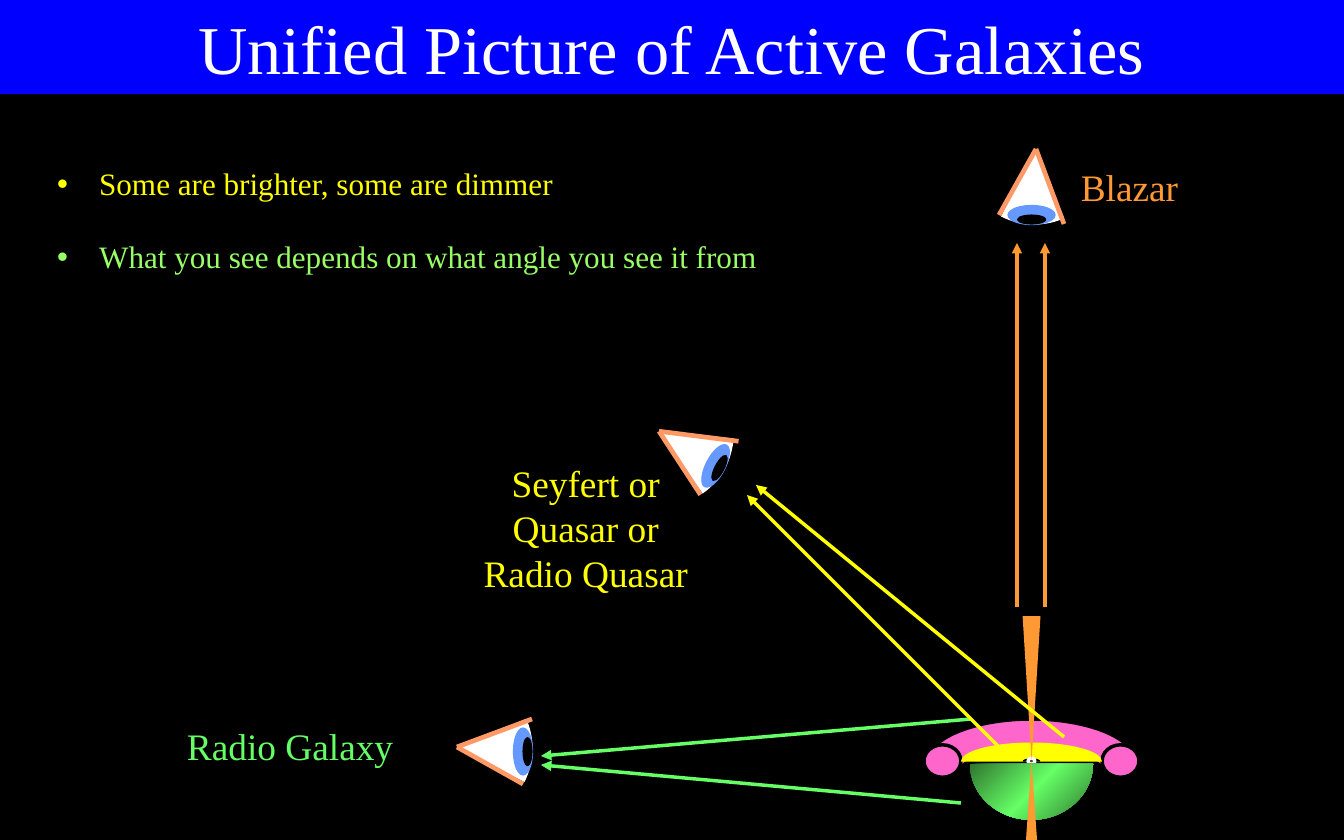
from copy import deepcopy
from itertools import pairwise
from math import cos, radians, sin, tan

from lxml.etree import SubElement
from pptx import Presentation
from pptx.dml.color import RGBColor
from pptx.enum.shapes import MSO_CONNECTOR as Link, MSO_SHAPE as Kind
from pptx.enum.text import MSO_ANCHOR as Anchor, MSO_AUTO_SIZE as Fit, PP_ALIGN as Align
from pptx.oxml.ns import qn
from pptx.util import Inches, Pt

FONT = "Times New Roman"
BLACK, WHITE = "000000", "FFFFFF"
PINK, YELLOW, ORANGE, GREEN = "FF66CC", "FFFF00", "FF9933", "66FF66"
AXIS = 9.21


def paint(target, color):
    """Give a fill one solid colour."""
    target.solid()
    target.fore_color.rgb = RGBColor.from_string(color)


def place(shape, left, top, width, height):
    """Move and size a shape in inches."""
    shape.left, shape.top = Inches(left), Inches(top)
    shape.width, shape.height = Inches(width), Inches(height)


def style(shape, fill, edge=None, weight=0.75):
    """Set the fill and outline of a shape."""
    shape.shadow.inherit = False
    paint(shape.fill, fill)
    if edge:
        paint(shape.line.fill, edge)
        shape.line.width = Pt(weight)
    else:
        shape.line.fill.background()


def preset(shapes, kind, mid, size, fill, edge=None, weight=0.75, turn=0):
    """Draw a preset shape around its middle point."""
    left, top = (m - s / 2 for m, s in zip(mid, size))
    shape = shapes.add_shape(kind, *map(Inches, (left, top, *size)))
    shape.rotation = turn
    style(shape, fill, edge, weight)


def arc(hub, radii, start, end):
    """List the Bezier points of an arc, cut at each quarter turn."""
    cuts = [start, *(q for q in range(-90, 541, 90) if start < q < end), end]
    spots = []
    for a, b in pairwise(map(radians, cuts)):
        k = 4 / 3 * tan((b - a) / 4)
        spots += [
            (cos(a), sin(a)),
            (cos(a) - k * sin(a), sin(a) + k * cos(a)),
            (cos(b) + k * sin(b), sin(b) - k * cos(b)),
        ]
    spots.append((cos(b), sin(b)))
    return [tuple(Inches(h + r * v) for h, r, v in zip(hub, radii, spot)) for spot in spots]


def curve(shape):
    """Turn straight steps into curves, and stroke only the arc."""
    paths = shape.element.spPr.find(qn("a:custGeom")).find(qn("a:pathLst"))
    body = paths[0]
    steps = body.findall(qn("a:lnTo"))[:-1]
    for first, *rest in zip(steps[::3], steps[1::3], steps[2::3]):
        bend = SubElement(body, qn("a:cubicBezTo"))
        first.addprevious(bend)
        for step in (first, *rest):
            bend.append(step[0])
            body.remove(step)
    rim = deepcopy(body)
    for tag in ("a:lnTo", "a:close"):
        rim.remove(rim.find(qn(tag)))
    rim.set("fill", "none")
    body.set("stroke", "0")
    paths.insert(0, rim)


def wedge(shapes, hub, radii, start, end, fill, edge=None):
    """Draw a sector of an ellipse, with angles clockwise from the right."""
    first, *rest = arc(hub, radii, start, end)
    pen = shapes.build_freeform(*first)
    pen.add_line_segments([*rest, tuple(map(Inches, hub))], close=True)
    shape = pen.convert_to_shape()
    curve(shape)
    style(shape, fill, edge)
    return shape


def blend(shape, colors, angle):
    """Fill a shape with evenly spaced gradient colours."""
    shape.fill.gradient()
    shape.fill.gradient_angle = angle
    stops = shape.element.spPr.find(qn("a:gradFill")).find(qn("a:gsLst"))
    while len(stops) < len(colors):
        stops.append(deepcopy(stops[0]))
    for rank, (stop, color) in enumerate(zip(shape.fill.gradient_stops, colors)):
        stop.position = rank / (len(colors) - 1)
        stop.color.rgb = RGBColor.from_string(color)


def line(shapes, start, end, color, weight=2.25, arrow=True):
    """Draw a straight line or arrow."""
    link = shapes.add_connector(Link.STRAIGHT, *map(Inches, (*start, *end)))
    paint(link.line.fill, color)
    link.line.width = Pt(weight)
    props = link._element.spPr
    if arrow:
        SubElement(props.find(qn("a:ln")), qn("a:tailEnd"), type="triangle")
    SubElement(props, qn("a:effectLst"))


def write(para, text, size, color):
    """Add one formatted run to a paragraph."""
    run = para.add_run()
    run.text = text
    run.font.name, run.font.size = FONT, Pt(size)
    run.font.color.rgb = RGBColor.from_string(color)


def label(slide, box, text, color):
    """Add a centred caption."""
    frame = slide.shapes.add_textbox(*map(Inches, box)).text_frame
    frame.word_wrap = True
    para = frame.paragraphs[0]
    para.alignment = Align.CENTER
    write(para, text, 24, color)


def eye(shapes, tip, turn):
    """Draw an eye that looks along an angle from its tip."""
    c, s = cos(radians(turn)), sin(radians(turn))

    def spin(x, y):
        """Turn a point about the tip."""
        return tip[0] + x * c - y * s, tip[1] + x * s + y * c

    ball = wedge(shapes, tip, (0.67, 0.67), -23.4, 26.6, WHITE, WHITE)
    x, y = spin(0.335, 0.02)
    place(ball, x - 0.335, y - 0.28, 0.67, 0.56)
    ball.rotation = turn
    for mid, size, color in (
        ((0.59, 0.03), (0.17, 0.42), "6699FF"),
        ((0.63, 0.03), (0.08, 0.25), BLACK),
    ):
        preset(shapes, Kind.OVAL, spin(*mid), size, color, color, turn=turn)
    for end in ((0.67, -0.26), (0.59, 0.32)):
        line(shapes, spin(0, -0.01), spin(*end), "FF9966", 3, False)


def galaxy(shapes):
    """Draw the torus, disk, core, jets and lobe."""
    wedge(shapes, (AXIS, 6.82), (0.93, 0.39), 165, 375, PINK, BLACK)
    wedge(shapes, (AXIS, 6.9), (0.66, 0.21), 180, 360, BLACK, BLACK)
    for side in (-1, 1):
        mid = (AXIS + side * 0.795, 6.795)
        preset(shapes, Kind.OVAL, mid, (0.33, 0.29), PINK, BLACK, 2.25)
    wedge(shapes, (AXIS, 6.8), (0.63, 0.17), 180, 360, YELLOW)
    wedge(shapes, (AXIS, 6.8), (0.08, 0.03), 180, 360, BLACK)
    preset(shapes, Kind.OVAL, (AXIS, 6.795), (0.06, 0.05), BLACK, WHITE, 2.25)
    preset(shapes, Kind.ISOSCELES_TRIANGLE, (AXIS, 6.145), (0.16, 1.29), ORANGE, turn=180)
    lobe = wedge(shapes, (AXIS, 6.82), (0.55, 0.5), 0, 180, GREEN)
    blend(lobe, ("2F762F", GREEN, "2F762F"), 315)
    preset(shapes, Kind.ISOSCELES_TRIANGLE, (AXIS, 7.185), (0.11, 0.79), ORANGE)


def head(slide, text):
    """Fill the title band."""
    shape = slide.shapes.title
    place(shape, 0, 0, 12, 0.84)
    paint(shape.fill, "0000FF")
    frame = shape.text_frame
    frame.auto_size, frame.vertical_anchor = Fit.NONE, Anchor.MIDDLE
    para = frame.paragraphs[0]
    para.alignment = Align.CENTER
    write(para, text, 44, WHITE)


def points(slide, items):
    """Fill the bullet list."""
    shape = slide.placeholders[1]
    place(shape, 0.41, 1.42, 7.42, 1.11)
    frame = shape.text_frame
    frame.auto_size = Fit.NONE
    for rank, (text, color) in enumerate(items):
        para = frame.add_paragraph() if rank else frame.paragraphs[0]
        para.space_before = Pt(23 if rank else 0)
        write(para, text, 20, color)


def main():
    """Build and save the slide."""
    deck = Presentation()
    deck.slide_width, deck.slide_height = Inches(12), Inches(7.5)
    slide = deck.slides.add_slide(deck.slide_layouts[1])
    paint(slide.background.fill, BLACK)

    head(slide, "Unified Picture of Active Galaxies")
    points(slide, (
        ("Some are brighter, some are dimmer", YELLOW),
        ("What you see depends on what angle you see it from", "99FF66"),
    ))
    galaxy(slide.shapes.add_group_shape().shapes)
    for tip, turn, box, text, color, rays in (
        ((4.08, 6.68), 0, (1.09, 6.41, 3, 0.5), "Radio Galaxy", GREEN,
         (((8.67, 6.42), (4.83, 6.75)), ((8.58, 7.17), (4.83, 6.83)))),
        ((5.88, 3.86), 27.6, (4.13, 4.06, 2.2, 1.31), "Seyfert or Quasar or Radio Quasar", YELLOW,
         (((9, 6.75), (6.67, 4.42)), ((9.5, 6.58), (6.75, 4.33)))),
        ((9.24, 1.33), 90, (8.83, 1.42, 2.51, 0.5), "Blazar", ORANGE,
         (((9.08, 5.42), (9.08, 2.17)), ((9.33, 5.42), (9.33, 2.17)))),
    ):
        eye(slide.shapes.add_group_shape().shapes, tip, turn)
        label(slide, box, text, color)
        beam = slide.shapes.add_group_shape().shapes
        for start, end in rays:
            line(beam, start, end, color)
    deck.save("out.pptx")


if __name__ == "__main__":
    main()
